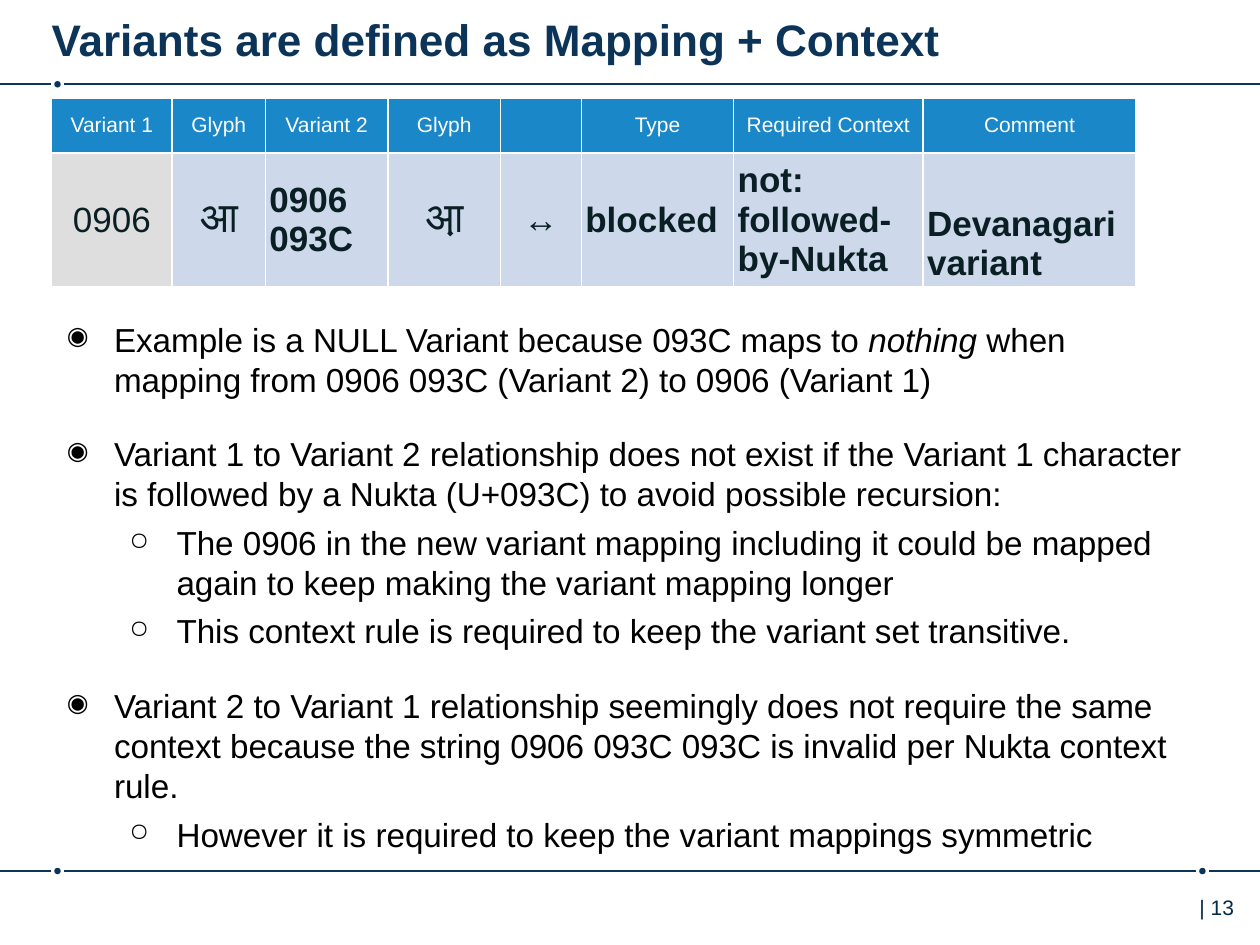
from lxml.etree import SubElement
from pptx import Presentation
from pptx.dml.color import RGBColor
from pptx.enum.shapes import MSO_CONNECTOR, MSO_SHAPE
from pptx.enum.text import MSO_ANCHOR, PP_ALIGN
from pptx.oxml.ns import qn
from pptx.util import Cm, Pt

NAVY = RGBColor(0x0C, 0x34, 0x58)
DARK_TEAL = RGBColor(0x00, 0x2B, 0x49)
HEADER_BLUE = RGBColor(0x1A, 0x87, 0xC9)
PALE_BLUE = RGBColor(0xCD, 0xD9, 0xEB)
GREY = RGBColor(0xDE, 0xDE, 0xDE)
INK = RGBColor(0x0A, 0x1F, 0x24)
WHITE = RGBColor(0xFF, 0xFF, 0xFF)
BLACK = RGBColor(0x00, 0x00, 0x00)
FONT = "Arial"
SLIDE_W, SLIDE_H = 25.4, 19.05

HEADERS = ["Variant 1", "Glyph", "Variant 2", "Glyph", "", "Type",
           "Required Context", "Comment"]
COL_WIDTHS = [2.43, 1.88, 2.47, 2.27, 1.63, 3.07, 3.82, 4.29]
# text, size, bold and left-aligned, vertical anchor
VARIANT_ROW = [
    ("0906", 20, False, MSO_ANCHOR.MIDDLE),
    ("आ", 24, False, MSO_ANCHOR.MIDDLE),
    ("0906 093C", 20, True, MSO_ANCHOR.MIDDLE),
    ("आ़", 24, False, MSO_ANCHOR.MIDDLE),
    ("↔", 20, False, MSO_ANCHOR.MIDDLE),
    ("blocked", 20, True, MSO_ANCHOR.MIDDLE),
    ("not: followed-by-Nukta", 20, True, MSO_ANCHOR.MIDDLE),
    ("Devanagari variant", 20, True, MSO_ANCHOR.BOTTOM),
]

# level, runs as (text, italic)
POINTS = [
    (0, [("Example is a NULL Variant because 093C maps to ", False),
         ("nothing", True),
         (" when mapping from 0906 093C (Variant 2) to 0906 (Variant 1)", False)]),
    (0, [("Variant 1 to Variant 2 relationship does not exist if the Variant 1 "
          "character is followed by a Nukta (U+093C) to avoid possible recursion:", False)]),
    (1, [("The 0906 in the new variant mapping including it could be mapped "
          "again to keep making the variant mapping longer", False)]),
    (1, [("This context rule is required to keep the variant set transitive.", False)]),
    (0, [("Variant 2 to Variant 1 relationship seemingly does not require the same "
          "context because the string 0906 093C 093C is invalid per Nukta context rule.", False)]),
    (1, [("However it is required to keep the variant mappings symmetric", False)]),
]
# bullet, left margin (cm), hanging indent (cm), space before (pt)
LEVELS = [("◉", 0.95, 0.95, 20), ("○", 2.21, 0.95, 5)]


def set_font(font, size, color, bold=False):
    font.name, font.size, font.bold = FONT, Pt(size), bold
    font.color.rgb = color


def set_margins(tf, x, y):
    tf.margin_left = tf.margin_right = Cm(x)
    tf.margin_top = tf.margin_bottom = Cm(y)


def add_dotted_rule(s, y, dots):
    """Draw a full-width rule that breaks around a small dot at each x in dots."""
    gap, size = 0.13, 0.13
    starts = [0] + [x + gap for x in dots]
    ends = [x - gap for x in dots] + [SLIDE_W]
    for start, end in zip(starts, ends):
        line = s.shapes.add_connector(MSO_CONNECTOR.STRAIGHT, Cm(start), Cm(y), Cm(end), Cm(y))
        line.line.color.rgb = NAVY
        line.line.width = Pt(1)
        SubElement(line.element.spPr, qn("a:effectLst"))
    for x in dots:
        dot = s.shapes.add_shape(MSO_SHAPE.OVAL, Cm(x - size / 2), Cm(y - size / 2),
                                 Cm(size), Cm(size))
        dot.shadow.inherit = False
        dot.fill.solid()
        dot.fill.fore_color.rgb = NAVY
        dot.line.fill.background()


def add_title(s, left, top, width, height):
    title = s.shapes.title
    title.left, title.top, title.width, title.height = map(Cm, (left, top, width, height))
    tf = title.text_frame
    tf.text = "Variants are defined as Mapping + Context"
    set_margins(tf, 0, 0.13)
    tf.vertical_anchor = MSO_ANCHOR.MIDDLE
    p = tf.paragraphs[0]
    p.alignment = PP_ALIGN.LEFT
    set_font(p.runs[0].font, 25.2, NAVY, True)


def add_cell_borders(cell):
    tc_pr = cell._tc.get_or_add_tcPr()
    for side in ("lnL", "lnR", "lnT", "lnB"):
        ln = SubElement(tc_pr, qn(f"a:{side}"), w=str(Pt(1)))
        SubElement(SubElement(ln, qn("a:solidFill")), qn("a:srgbClr"), val=str(WHITE))


def fill_cell(cell, text, size, color, fill, bold=False, anchor=MSO_ANCHOR.MIDDLE):
    add_cell_borders(cell)
    cell.fill.solid()
    cell.fill.fore_color.rgb = fill
    cell.vertical_anchor = anchor
    set_margins(cell, 0.08, 0.08)
    p = cell.text_frame.paragraphs[0]
    p.text = text
    p.alignment = PP_ALIGN.LEFT if bold else PP_ALIGN.CENTER
    set_font(p.font, size, color, bold)
    for r in p.runs:
        set_font(r.font, size, color, bold)


def add_variant_table(s, left, top, row_heights):
    table = s.shapes.add_table(2, len(HEADERS), Cm(left), Cm(top),
                               Cm(sum(COL_WIDTHS)), Cm(sum(row_heights))).table
    for row, height in zip(table.rows, row_heights):
        row.height = Cm(height)
    for col, width in enumerate(COL_WIDTHS):
        table.columns[col].width = Cm(width)
        fill_cell(table.cell(0, col), HEADERS[col], 12, WHITE, HEADER_BLUE)
        text, size, bold, anchor = VARIANT_ROW[col]
        fill_cell(table.cell(1, col), text, size, INK, PALE_BLUE if col else GREY, bold, anchor)


def add_bullets(s, left, top, width, height):
    tf = s.shapes.add_textbox(Cm(left), Cm(top), Cm(width), Cm(height)).text_frame
    tf.word_wrap = True
    set_margins(tf, 0, 0)
    for i, (level, runs) in enumerate(POINTS):
        p = tf.add_paragraph() if i else tf.paragraphs[0]
        bullet, margin, indent, before = LEVELS[level]
        p.level = level
        p_pr = p._p.get_or_add_pPr()
        p_pr.set("marL", str(Cm(margin)))
        p_pr.set("indent", str(-Cm(indent)))
        SubElement(p_pr, qn("a:buSzPct"), val="75000")
        SubElement(p_pr, qn("a:buChar"), char=bullet)
        p.space_before = Pt(before if i else 0)
        for text, italic in runs:
            r = p.add_run()
            r.text = text
            set_font(r.font, 19, BLACK)
            r.font.italic = italic


def add_page_number(s, left, top, width, height):
    tf = s.shapes.add_textbox(Cm(left), Cm(top), Cm(width), Cm(height)).text_frame
    set_margins(tf, 0, 0.13)
    tf.text = "| 13"
    set_font(tf.paragraphs[0].runs[0].font, 12, DARK_TEAL)


def main():
    prs = Presentation()
    prs.slide_width, prs.slide_height = Cm(SLIDE_W), Cm(SLIDE_H)
    s = prs.slides.add_slide(prs.slide_layouts[5])
    add_dotted_rule(s, 1.7, [1.16])
    add_dotted_rule(s, 17.56, [1.16, 24.24])
    add_page_number(s, 24.18, 17.9, 1.1, 1.02)
    add_title(s, 1.04, 0.16, 22.25, 1.24)
    add_bullets(s, 1.35, 6.43, 22.83, 10.64)
    add_variant_table(s, 1.04, 1.98, [1.1, 2.52])
    prs.save("out.pptx")


if __name__ == "__main__":
    main()
